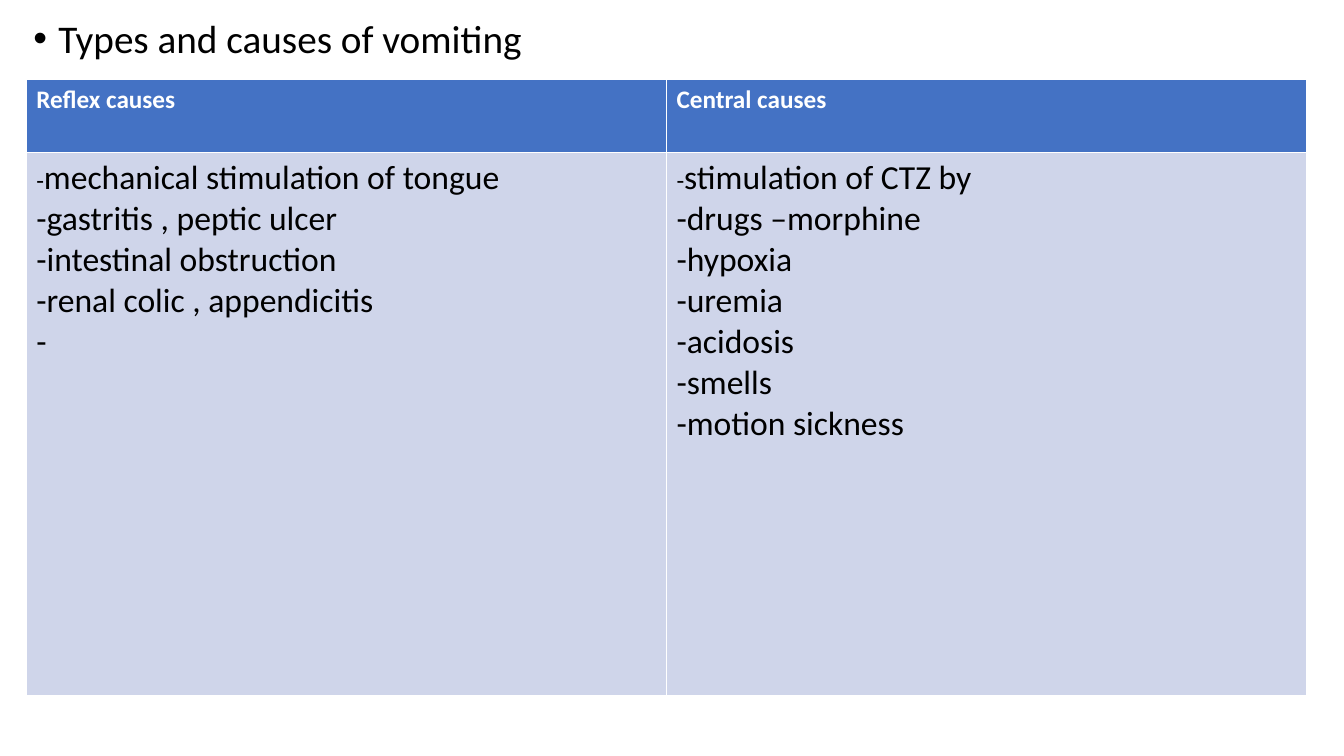
import dataclasses
import typing

import lxml.etree
import pptx
import pptx.dml.color
import pptx.enum.text
import pptx.oxml.ns
import pptx.util

Inches = pptx.util.Inches
Pt = pptx.util.Pt

COLORS: dict[str, str] = {
    "background": "FFFFFF",
    "text": "000000",
    "header_text": "FFFFFF",
    "header_fill": "4472C4",
    "body_fill": "CFD5EA",
}


@dataclasses.dataclass(frozen=True)
class CauseColumn:
    heading: str
    causes: tuple[str, ...]


COLUMNS = (
    CauseColumn(
        "Reflex causes",
        (
            "mechanical stimulation of tongue",
            "gastritis , peptic ulcer",
            "intestinal obstruction",
            "renal colic , appendicitis",
            "",
        ),
    ),
    CauseColumn(
        "Central causes",
        (
            "stimulation of CTZ by",
            "drugs –morphine",
            "hypoxia",
            "uremia",
            "acidosis",
            "smells",
            "motion sickness",
        ),
    ),
)
COLUMN_WIDTH = 6.35
ROW_HEIGHTS = (0.72, 5.39)


def rgb(name: str) -> pptx.dml.color.RGBColor:
    return pptx.dml.color.RGBColor.from_string(COLORS[name])


def apply_format(target: typing.Any, values: dict[str, typing.Any]) -> None:
    for name, value in values.items():
        setattr(target, name, value)


def add_run(paragraph: typing.Any, text: str, size: int, color: str, bold: bool = False) -> None:
    run = paragraph.add_run()
    run.text = text
    apply_format(run.font, {"name": "Calibri", "size": Pt(size), "bold": bold})
    run.font.color.rgb = rgb(color)


def fill_cell(cell: typing.Any, color: str) -> None:
    cell.fill.solid()
    cell.fill.fore_color.rgb = rgb(color)


def format_heading(body: typing.Any) -> None:
    apply_format(
        body,
        {"left": Inches(0.23), "top": Inches(0.14), "width": Inches(12.84), "height": Inches(6.96)},
    )
    apply_format(
        body.text_frame,
        {
            "word_wrap": True,
            "auto_size": pptx.enum.text.MSO_AUTO_SIZE.NONE,
            "vertical_anchor": pptx.enum.text.MSO_ANCHOR.TOP,
        },
    )
    paragraph = body.text_frame.paragraphs[0]
    add_run(paragraph, "Types and causes of vomiting", 28, "text")
    apply_format(paragraph, {"line_spacing": 0.9, "space_before": Pt(10)})
    properties = paragraph._p.get_or_add_pPr()
    properties.set("marL", str(Inches(0.25)))
    properties.set("indent", str(Inches(-0.25)))
    for tag, attribute, value in (("a:buFont", "typeface", "Arial"), ("a:buChar", "char", "•")):
        lxml.etree.SubElement(properties, pptx.oxml.ns.qn(tag)).set(attribute, value)


def fill_column(table: typing.Any, index: int, column: CauseColumn) -> None:
    table.columns[index].width = Inches(COLUMN_WIDTH)
    header, body = table.cell(0, index), table.cell(1, index)
    fill_cell(header, "header_fill")
    add_run(header.text_frame.paragraphs[0], column.heading, 18, "header_text", True)
    fill_cell(body, "body_fill")
    for position, cause in enumerate(column.causes):
        if position == 0:
            paragraph = body.text_frame.paragraphs[0]
            add_run(paragraph, "-", 18, "text")
            add_run(paragraph, cause, 24, "text")
        else:
            add_run(body.text_frame.add_paragraph(), f"-{cause}", 24, "text")


def main() -> None:
    presentation = pptx.Presentation()
    apply_format(presentation, {"slide_width": Inches(13.33), "slide_height": Inches(7.5)})
    slide = presentation.slides.add_slide(presentation.slide_layouts[1])
    slide.background.fill.solid()
    slide.background.fill.fore_color.rgb = rgb("background")
    title = slide.shapes.title.element
    title.getparent().remove(title)
    format_heading(slide.placeholders[1])

    table = slide.shapes.add_table(
        len(ROW_HEIGHTS),
        len(COLUMNS),
        Inches(0.26),
        Inches(0.79),
        Inches(COLUMN_WIDTH * len(COLUMNS)),
        Inches(sum(ROW_HEIGHTS)),
    ).table
    for row, height in zip(table.rows, ROW_HEIGHTS):
        row.height = Inches(height)
    for index, column in enumerate(COLUMNS):
        fill_column(table, index, column)
    presentation.save("out.pptx")


if __name__ == "__main__":
    main()
